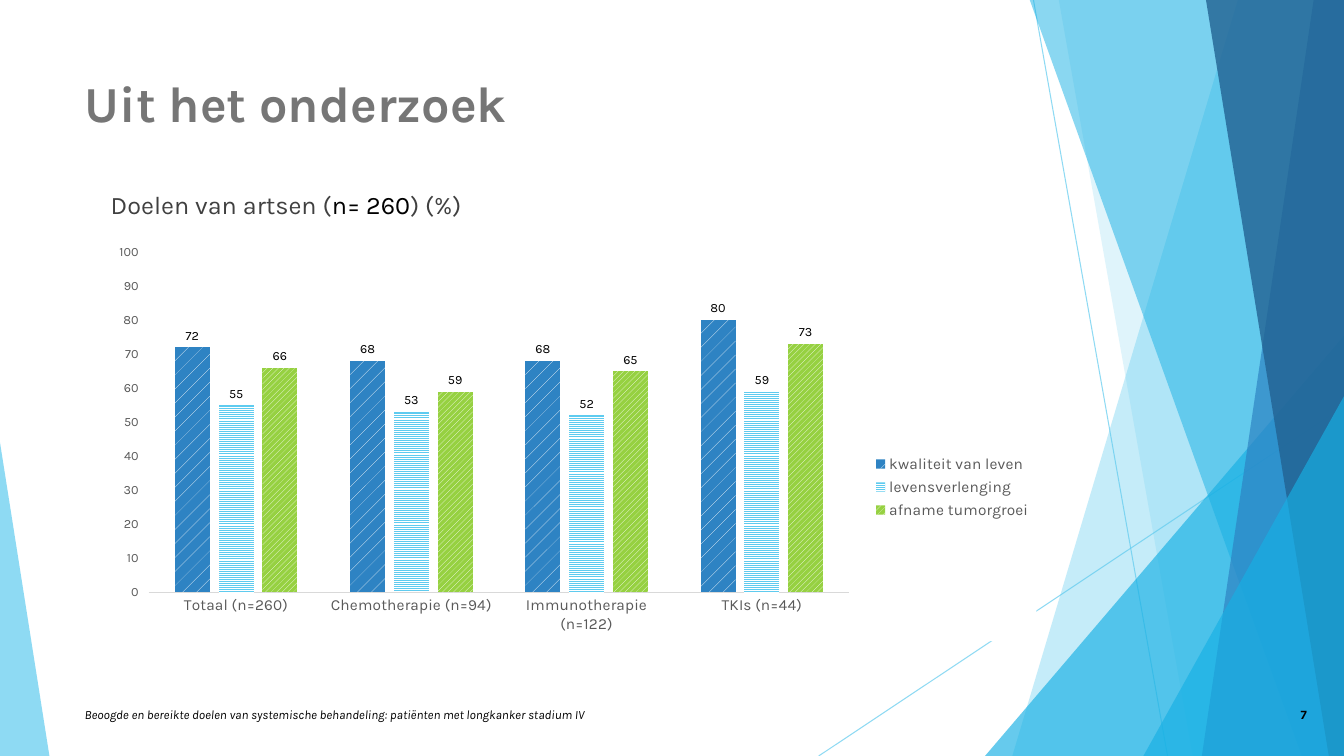
import pptx
import pptx.chart.data
import pptx.dml.color
import pptx.enum.chart
import pptx.enum.dml
import pptx.enum.shapes
import pptx.enum.text
import pptx.oxml
import pptx.oxml.ns
import pptx.util

Inches = pptx.util.Inches
Pt = pptx.util.Pt
tone = pptx.dml.color.RGBColor.from_string
anchor = pptx.enum.text.MSO_ANCHOR
align = pptx.enum.text.PP_ALIGN
kinds = pptx.enum.shapes
marks = pptx.enum.chart
hatch = pptx.enum.dml.MSO_PATTERN
spaces = pptx.oxml.ns.nsdecls("a", "c")


def write(para, text, size=9, color="000000", bold=False, italic=False):
    run = para.add_run()
    run.text = text
    font = run.font
    font.name, font.size = "Karla", Pt(size)
    font.bold, font.italic = bold, italic
    font.color.rgb = tone(color)


def fade(shape, percent):
    """Set the opacity of the shape's colour and strip its shadow."""
    look = shape._element.spPr
    paint = look.xpath(".//a:srgbClr")[0]
    paint.append(pptx.oxml.parse_xml(f'<a:alpha {spaces} val="{percent * 1000}"/>'))
    if not look.xpath("a:effectLst"):
        look.append(pptx.oxml.parse_xml(f"<a:effectLst {spaces}/>"))


deck = pptx.Presentation()
deck.slide_width, deck.slide_height = Inches(13.33), Inches(7.5)
slide = deck.slides.add_slide(deck.slide_layouts[5])
shapes = slide.shapes

# Backdrop: thin lines, then bands and triangles from back to front
for x1, y1, x2, y2 in [(10.25, 0, 11.58, 7.5), (13.33, 4.03, 8.12, 7.5)]:
    line = shapes.add_connector(kinds.MSO_CONNECTOR.STRAIGHT,
                                Inches(x1), Inches(y1), Inches(x2), Inches(y2))
    line.line.color.rgb = tone("5FCBEF")
    line.line.width = Pt(0.75)
    fade(line, 70)

# A band is (top x, bottom x), a triangle (left, top, width, apex)
backdrop = [
    ((12.28, 10.04), "5FCBEF", 36),
    ((10.5, 11.83), "5FCBEF", 20),
    ((9.77, 3.33, 3.56, 1), "17B0E4", 66),
    ((10.21, 12.91), "17B0E4", 50),
    ((13.03, 11.92), "2E83C3", 70),
    ((11.96, 13.18), "226292", 80),
    ((11.34, 3.93, 1.99, 1), "17B0E4", 66),
    ((0, 4.39, 0.49, 0), "5FCBEF", 70),
]
for place, color, percent in backdrop:
    if len(place) == 2:
        top, base = place
        pen = shapes.build_freeform(Inches(top), Inches(-0.01))
        pen.add_line_segments([(Inches(x), Inches(y)) for x, y in
                               [(13.33, -0.01), (13.33, 7.5), (base, 7.5)]])
        facet = pen.convert_to_shape()
    else:
        left, top, width, apex = place
        facet = shapes.add_shape(kinds.MSO_SHAPE.ISOSCELES_TRIANGLE, Inches(left),
                                 Inches(top), Inches(width), Inches(7.5 - top))
        facet.adjustments[0] = apex
    facet.fill.solid()
    facet.fill.fore_color.rgb = tone(color)
    facet.line.fill.background()
    facet.shadow.inherit = False
    fade(facet, percent)

# Title
title = shapes.title
title.left, title.top = Inches(0.74), Inches(0.67)
title.width, title.height = Inches(9.4), Inches(1.44)
title.text_frame.vertical_anchor = anchor.TOP
para = title.text_frame.paragraphs[0]
para.alignment = align.LEFT
write(para, "Uit het onderzoek", size=36, color="767676", bold=True)

# Chart heading, footer and page number
notes = [
    ((0.74, 1.83, 9.4, 4.24), anchor.TOP, align.LEFT, 0.26,
     [("Doelen van artsen (", dict(size=18, color="404040")),
      ("n= 260", dict(size=18)),
      (") (%)", dict(size=18, color="404040"))]),
    ((12.31, 6.89, 0.75, 0.4), anchor.MIDDLE, align.RIGHT, 0,
     [("7", dict(bold=True))]),
    ((0.74, 6.89, 6.89, 0.4), anchor.MIDDLE, align.LEFT, 0,
     [("Beoogde en bereikte doelen van systemische behandeling: "
       "patiënten met longkanker stadium IV", dict(italic=True))]),
]
for place, hold, side, indent, runs in notes:
    box = shapes.add_textbox(*map(Inches, place))
    frame = box.text_frame
    frame.word_wrap = True
    frame.vertical_anchor = hold
    para = frame.paragraphs[0]
    para.alignment = side
    para._p.get_or_add_pPr().set("marL", str(Inches(indent)))
    for text, style in runs:
        write(para, text, **style)

# Chart
series = [
    ("kwaliteit van leven", (72, 68, 68, 80), hatch.PERCENT_5, "2E83C3"),
    ("levensverlenging", (55, 53, 52, 59), hatch.LIGHT_HORIZONTAL, "5FCBEF"),
    ("afname tumorgroei", (66, 59, 65, 73), hatch.WIDE_UPWARD_DIAGONAL, "96D141"),
]
data = pptx.chart.data.CategoryChartData(number_format="0")
data.categories = ["Totaal (n=260)", "Chemotherapie (n=94)",
                   "Immunotherapie (n=122)", "TKIs (n=44)"]
for name, values, *_ in series:
    data.add_series(name, values)
chart = shapes.add_chart(marks.XL_CHART_TYPE.COLUMN_CLUSTERED, Inches(1.01), Inches(2.34),
                         Inches(9.27), Inches(4.02), data).chart
chart.has_title = False
chart.font.name, chart.font.size = "Karla", Pt(10)
chart.font.color.rgb = tone("000000")
chart.has_legend = True
legend = chart.legend
legend.position = marks.XL_LEGEND_POSITION.RIGHT
legend.include_in_layout = False

plot = chart.plots[0]
plot.gap_width, plot.overlap = 150, -25
plot.vary_by_categories = False
for bars, (_, _, pattern, color) in zip(plot.series, series):
    fill = bars.format.fill
    fill.patterned()
    fill.pattern = pattern
    fill.fore_color.rgb = tone("FFFFFF")
    fill.back_color.rgb = tone(color)
    bars.format.line.fill.background()
    labels = bars.data_labels
    labels.show_value = True
    labels.position = marks.XL_LABEL_POSITION.OUTSIDE_END
    labels.number_format, labels.number_format_is_linked = "0", False
    labels.font.name, labels.font.size = "Karla", Pt(9)
    labels.font.color.rgb = tone("000000")

across, up = chart.category_axis, chart.value_axis
across.major_tick_mark = marks.XL_TICK_MARK.NONE
across.format.line.color.rgb = tone("D9D9D9")
across.format.line.width = Pt(0.75)
up.minimum_scale, up.maximum_scale, up.major_unit = 0, 100, 10
up.has_major_gridlines = False
up.format.line.fill.background()
up.tick_labels.number_format = "0"
up.tick_labels.number_format_is_linked = False
for font, size in [(across.tick_labels.font, 11), (up.tick_labels.font, 9),
                   (legend.font, 11)]:
    font.name, font.size = "Karla", Pt(size)
    font.color.rgb = tone("595959")

# White chart area, and fixed places for the plot and the legend
root = chart._chartSpace
root.xpath("c:chart")[0].addnext(pptx.oxml.parse_xml(
    f'<c:spPr {spaces}><a:solidFill><a:srgbClr val="FFFFFF"/></a:solidFill>'
    "<a:ln><a:noFill/></a:ln></c:spPr>"))
for tag, index, target, (x, y, w, h) in [
        ("plotArea", 0, '<c:layoutTarget val="inner"/>', (0.05, 0.04, 0.75, 0.84)),
        ("legend", 1, "", (0.82, 0.53, 0.18, 0.18))]:
    area = root.xpath(f"c:chart/c:{tag}")[0]
    for old in area.xpath("c:layout"):
        area.remove(old)
    area.insert(index, pptx.oxml.parse_xml(
        f"<c:layout {spaces}><c:manualLayout>{target}"
        '<c:xMode val="edge"/><c:yMode val="edge"/>'
        f'<c:x val="{x}"/><c:y val="{y}"/><c:w val="{w}"/><c:h val="{h}"/>'
        "</c:manualLayout></c:layout>"))

deck.save("out.pptx")
